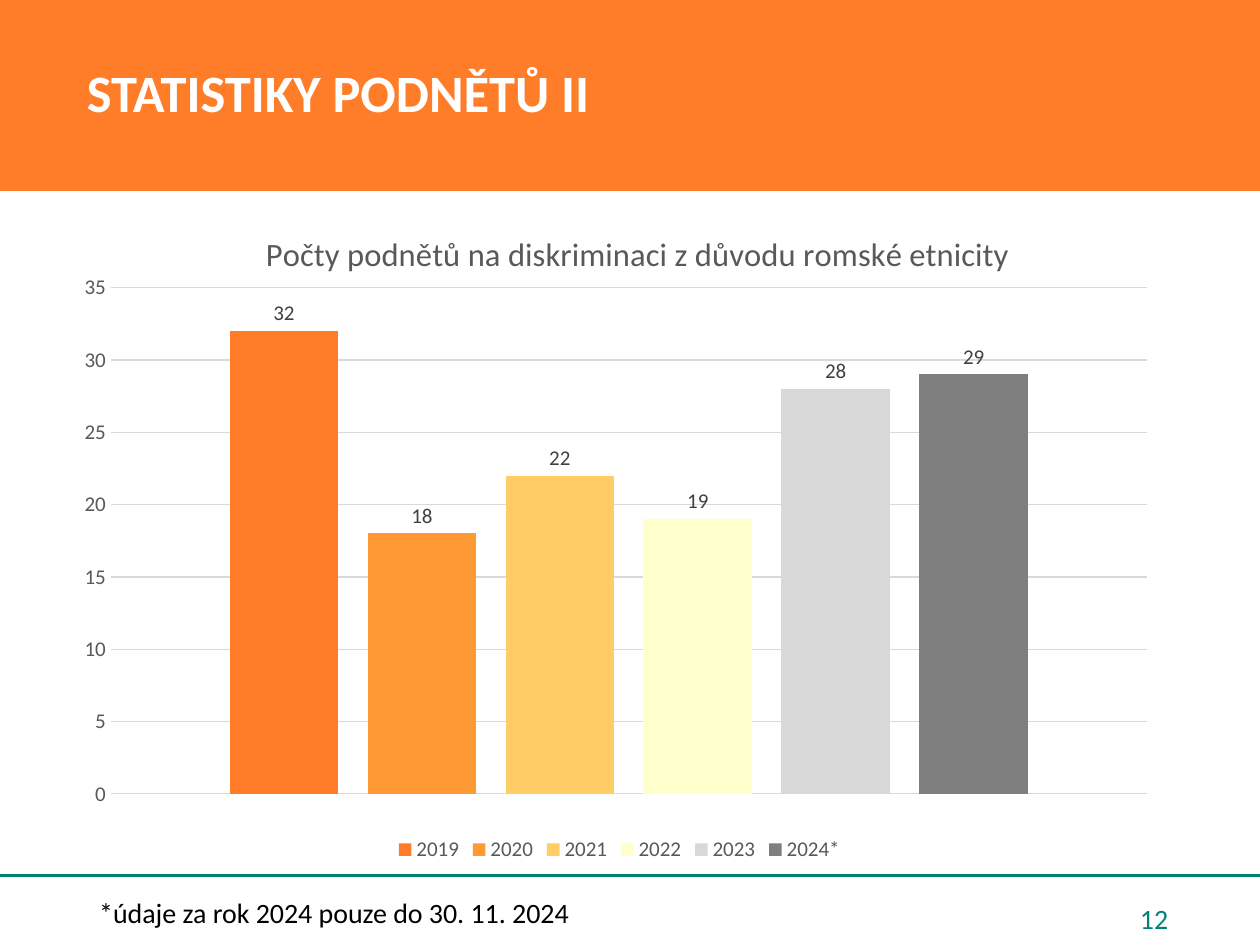
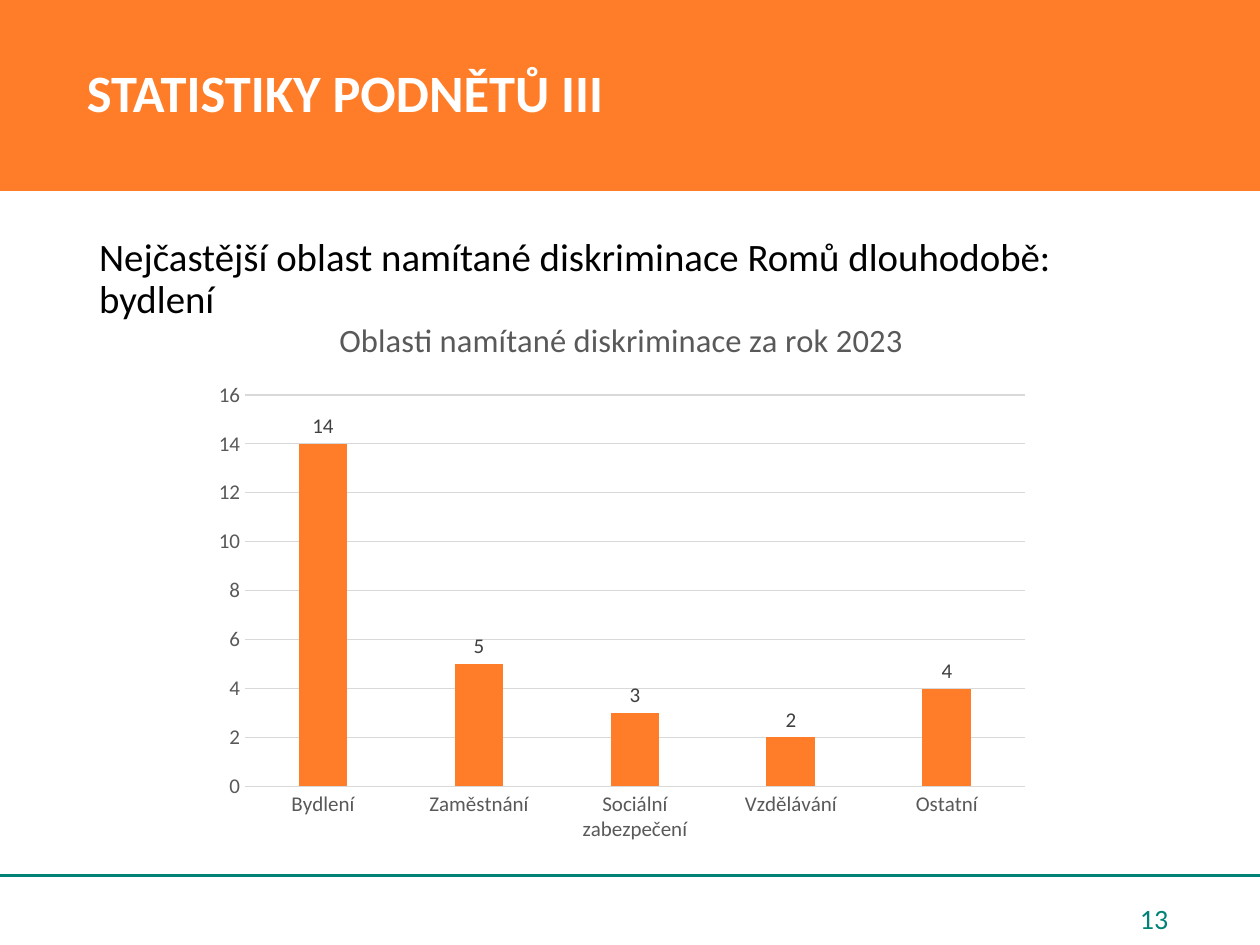
from lxml.etree import SubElement
from pptx import Presentation
from pptx.chart.data import CategoryChartData
from pptx.dml.color import RGBColor
from pptx.enum.chart import XL_CHART_TYPE as ChartType
from pptx.enum.chart import XL_LABEL_POSITION as LabelPos
from pptx.enum.chart import XL_LEGEND_POSITION as LegendPos
from pptx.enum.chart import XL_TICK_MARK as Tick
from pptx.enum.shapes import MSO_CONNECTOR as Connector
from pptx.enum.shapes import MSO_SHAPE as Shape
from pptx.enum.text import MSO_ANCHOR as Anchor
from pptx.enum.text import PP_ALIGN as Align
from pptx.oxml import parse_xml
from pptx.oxml.ns import qn
from pptx.util import Cm, Pt

FONT = "Calibri"
ORANGE = RGBColor(0xFF, 0x7D, 0x28)
TEAL = RGBColor(0x00, 0x82, 0x76)
WHITE = RGBColor(0xFF, 0xFF, 0xFF)
BLACK = RGBColor(0x00, 0x00, 0x00)
AXIS_GREY = RGBColor(0x59, 0x59, 0x59)
LABEL_GREY = RGBColor(0x40, 0x40, 0x40)
GRID_GREY = RGBColor(0xD9, 0xD9, 0xD9)
YEAR_COLORS = [
    ORANGE,
    RGBColor(0xFF, 0x99, 0x33),
    RGBColor(0xFF, 0xCC, 0x66),
    RGBColor(0xFF, 0xFF, 0xCC),
    RGBColor(0xD8, 0xD8, 0xD8),
    RGBColor(0x7F, 0x7F, 0x7F),
]
BAND_HEIGHT = Cm(3.84)
RULE_TOP = Cm(17.65)
FOOTER_TOP = Cm(18)
FOOTER_HEIGHT = Cm(1.02)


def set_font(font, size, color, bold=False):
    """Apply the shared typeface with a size, colour and weight."""
    font.name = FONT
    font.size = Pt(size)
    font.bold = bold
    font.color.rgb = color


def add_text(slide, box, text, size, color, bold=False, align=Align.LEFT,
             anchor=Anchor.TOP, spacing=0.9, inset=Cm(0.25)):
    """Add a wrapped one-paragraph text box."""
    tf = slide.shapes.add_textbox(*box).text_frame
    tf.word_wrap = True
    tf.vertical_anchor = anchor
    tf.margin_left = inset
    p = tf.paragraphs[0]
    p.text = text
    p.alignment = align
    p.line_spacing = spacing
    set_font(p.font, size, color, bold)


def add_rule(slide):
    """Draw the teal line above the footer."""
    rule = slide.shapes.add_connector(
        Connector.STRAIGHT, Cm(-0.08), RULE_TOP, Cm(25.5), RULE_TOP)
    rule.line.color.rgb = TEAL
    rule.line.width = Pt(2.25)
    SubElement(rule._element.spPr, qn("a:effectLst"))


def add_frame(prs, title, number):
    """Add a slide with its title band, footer line and page number."""
    slide = prs.slides.add_slide(prs.slide_layouts[6])
    add_rule(slide)
    band = slide.shapes.add_shape(Shape.RECTANGLE, 0, 0, Cm(25.5), BAND_HEIGHT)
    band.shadow.inherit = False
    band.fill.solid()
    band.fill.fore_color.rgb = ORANGE
    band.line.color.rgb = ORANGE
    band.line.width = Pt(1)
    add_text(slide, (0, 0, prs.slide_width, BAND_HEIGHT), title, 30, WHITE,
             bold=True, anchor=Anchor.MIDDLE, inset=Cm(1.75))
    add_text(slide, (Cm(17.98), FOOTER_TOP, Cm(5.82), FOOTER_HEIGHT),
             str(number), 16, TEAL, align=Align.RIGHT, anchor=Anchor.MIDDLE,
             spacing=1.0)
    return slide


def set_layout(parent, index, **values):
    """Place a chart part by fractions of the chart area."""
    layout = parent.find(qn("c:layout"))
    if layout is None:
        layout = parse_xml(
            '<c:layout xmlns:c="http://schemas.openxmlformats.org/'
            'drawingml/2006/chart"/>')
        parent.insert(index, layout)
    manual = SubElement(layout, qn("c:manualLayout"))
    for name, value in values.items():
        SubElement(manual, qn(f"c:{name}")).set("val", str(value))


def style_axes(chart, top, step):
    """Format the category axis, value axis and gridlines."""
    for axis in (chart.category_axis, chart.value_axis):
        axis.major_tick_mark = axis.minor_tick_mark = Tick.NONE
        set_font(axis.tick_labels.font, 12, AXIS_GREY)
    values = chart.value_axis
    values.minimum_scale = 0
    values.maximum_scale = top
    values.major_unit = step
    values.format.line.fill.background()
    for line in (values.major_gridlines.format.line,
                 chart.category_axis.format.line):
        line.color.rgb = GRID_GREY
        line.width = Pt(0.75)


def add_columns(slide, box, title, categories, series, colors, top, step, plot_area):
    """Add a titled column chart with a value above each column."""
    data = CategoryChartData()
    data.categories = categories
    for name, values in series:
        data.add_series(name, values)
    chart = slide.shapes.add_chart(ChartType.COLUMN_CLUSTERED, *box, data).chart
    set_font(chart.font, 10, BLACK)
    chart.has_legend = False
    chart.has_title = True
    p = chart.chart_title.text_frame.paragraphs[0]
    p.text = title
    set_font(p.font, 18.6, AXIS_GREY)
    style_axes(chart, top, step)

    plot = chart.plots[0]
    plot.gap_width = 219
    plot.overlap = -27
    plot.vary_by_categories = False
    plot.has_data_labels = True
    labels = plot.data_labels
    labels.show_value = True
    labels.position = LabelPos.OUTSIDE_END
    set_font(labels.font, 12, LABEL_GREY)
    for s, color in zip(plot.series, colors):
        s.format.fill.solid()
        s.format.fill.fore_color.rgb = color
        s.invert_if_negative = False
    x, y, w, h = plot_area
    set_layout(plot._element.getparent(), 0, layoutTarget="inner",
               xMode="edge", yMode="edge", x=x, y=y, w=w, h=h)
    return chart


def add_year_slide(prs):
    """Build the slide with complaint counts by year."""
    slide = add_frame(prs, "STATISTIKY PODNĚTŮ II", 12)
    add_text(slide, (Cm(1.75), FOOTER_TOP, Cm(20), FOOTER_HEIGHT),
             "*údaje za rok 2024 pouze do 30. 11. 2024", 16, BLACK)
    years = ["2019", "2020", "2021", "2022", "2023", "2024*"]
    counts = [32, 18, 22, 19, 28, 29]
    chart = add_columns(
        slide, (Cm(1.17), Cm(3.56), Cm(22.63), Cm(13.92)),
        "Počty podnětů na diskriminaci z důvodu romské etnicity", ["1"],
        [(year, [count]) for year, count in zip(years, counts)],
        YEAR_COLORS, 35, 5, (0.047, 0.161, 0.923, 0.733))
    chart.category_axis.visible = False
    set_layout(chart.chart_title._element, 1, xMode="edge", yMode="edge",
               x=0.18, y=0.07)
    chart.has_legend = True
    chart.legend.position = LegendPos.BOTTOM
    chart.legend.include_in_layout = False
    set_font(chart.legend.font, 12, AXIS_GREY)


def add_area_slide(prs):
    """Build the slide with complaints by area of life."""
    slide = add_frame(prs, "STATISTIKY PODNĚTŮ III", 13)
    add_text(slide, (Cm(1.75), Cm(4.67), Cm(22.07), Cm(1.6)),
             "Nejčastější oblast namítané diskriminace Romů dlouhodobě: bydlení",
             22.2, BLACK)
    title = "Oblasti namítané diskriminace za rok 2023"
    areas = ["Bydlení", "Zaměstnání", "Sociální zabezpečení", "Vzdělávání",
             "Ostatní"]
    add_columns(slide, (Cm(4.06), Cm(5.92), Cm(16.94), Cm(11.28)), title, areas,
                [(title, [14, 5, 3, 2, 4])], [ORANGE], 16, 2,
                (0.052, 0.181, 0.928, 0.7))


def main():
    """Build and save the presentation."""
    prs = Presentation()
    prs.slide_width = Cm(25.4)
    prs.slide_height = Cm(19.05)
    add_year_slide(prs)
    add_area_slide(prs)
    prs.save("out.pptx")


if __name__ == "__main__":
    main()
